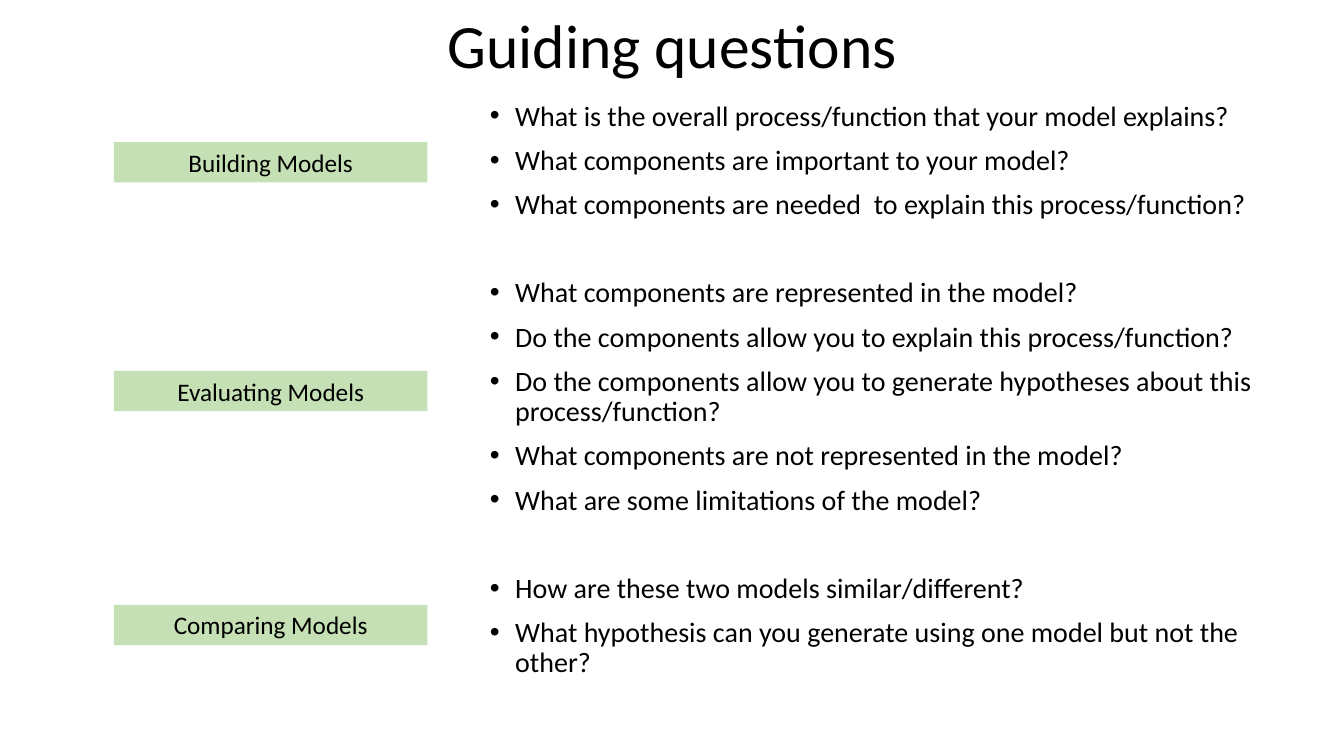
from pptx import Presentation
from pptx.dml.color import RGBColor
from pptx.enum.shapes import MSO_SHAPE
from pptx.enum.text import MSO_ANCHOR, MSO_AUTO_SIZE, PP_ALIGN
from pptx.util import Inches, Pt

RECTANGLE = MSO_SHAPE.RECTANGLE
MIDDLE, TOP = MSO_ANCHOR.MIDDLE, MSO_ANCHOR.TOP
CENTER, LEFT = PP_ALIGN.CENTER, PP_ALIGN.LEFT
NO_AUTOFIT = MSO_AUTO_SIZE.NONE

FONT = "Calibri"
BLACK = "000000"
GREEN = "C5E0B4"
QUESTION_SPACING = 10
GROUP_SPACING = 41.5

STAGES = [
    ("Building Models", 1.41, [
        "What is the overall process/function that your model explains?",
        "What components are important to your model?",
        "What components are needed  to explain this process/function?",
    ]),
    ("Evaluating Models", 3.68, [
        "What components are represented in the model?",
        "Do the components allow you to explain this process/function?",
        "Do the components allow you to generate hypotheses about this process/function?",
        "What components are not represented in the model?",
        "What are some limitations of the model?",
    ]),
    ("Comparing Models", 6, [
        "How are these two models similar/different?",
        "What hypothesis can you generate using one model but not the other?",
    ]),
]


def color(hex_code):
    """Turn a hex string into a colour."""
    return RGBColor.from_string(hex_code)


def write(paragraph, text, size, align=LEFT, line_spacing=1.0, before=0):
    """Put formatted text into a paragraph."""
    run = paragraph.add_run()
    run.text = text
    run.font.name = FONT
    run.font.size = Pt(size)
    run.font.color.rgb = color(BLACK)
    paragraph.alignment = align
    paragraph.line_spacing = line_spacing
    paragraph.space_before = Pt(before)


def place(placeholder, box, anchor):
    """Move a placeholder into a box and return its text frame."""
    placeholder.left, placeholder.top, placeholder.width, placeholder.height = map(Inches, box)
    frame = placeholder.text_frame
    frame.auto_size = NO_AUTOFIT
    frame.vertical_anchor = anchor
    frame.word_wrap = True
    return frame


def add_heading(slide, box):
    """Fill the slide title."""
    frame = place(slide.shapes.title, box, MIDDLE)
    write(frame.paragraphs[0], "Guiding questions", 44, align=CENTER, line_spacing=0.9)


def add_questions(slide, box):
    """List the questions of all stages, with a wider gap between stages."""
    frame = place(slide.placeholders[1], box, TOP)
    paragraph = frame.paragraphs[0]
    for stage_index, (_, _, questions) in enumerate(STAGES):
        for index, question in enumerate(questions):
            if stage_index or index:
                paragraph = frame.add_paragraph()
            starts_group = stage_index and not index
            write(paragraph, question, 20, line_spacing=0.9,
                  before=GROUP_SPACING if starts_group else QUESTION_SPACING)
            properties = paragraph._p.get_or_add_pPr()
            properties.set("marL", str(Inches(0.25)))
            properties.set("indent", str(Inches(-0.25)))


def add_stage_label(slide, box, stage):
    """Draw the green label of one stage."""
    label = slide.shapes.add_shape(RECTANGLE, *map(Inches, box))
    label.shadow.inherit = False
    label.fill.solid()
    label.fill.fore_color.rgb = color(GREEN)
    label.line.fill.background()
    label.text_frame.word_wrap = True
    label.text_frame.vertical_anchor = TOP
    write(label.text_frame.paragraphs[0], stage, 18, align=CENTER)


def main():
    """Build and save the slide."""
    presentation = Presentation()
    presentation.slide_width = Inches(13.33)
    presentation.slide_height = Inches(7.5)
    slide = presentation.slides.add_slide(presentation.slide_layouts[1])
    add_heading(slide, (0.92, 0, 11.5, 0.96))
    add_questions(slide, (4.76, 0.96, 7.94, 6.25))
    for stage, top, _ in STAGES:
        add_stage_label(slide, (1.13, top, 3.11, 0.4), stage)
    presentation.save("out.pptx")


if __name__ == "__main__":
    main()
